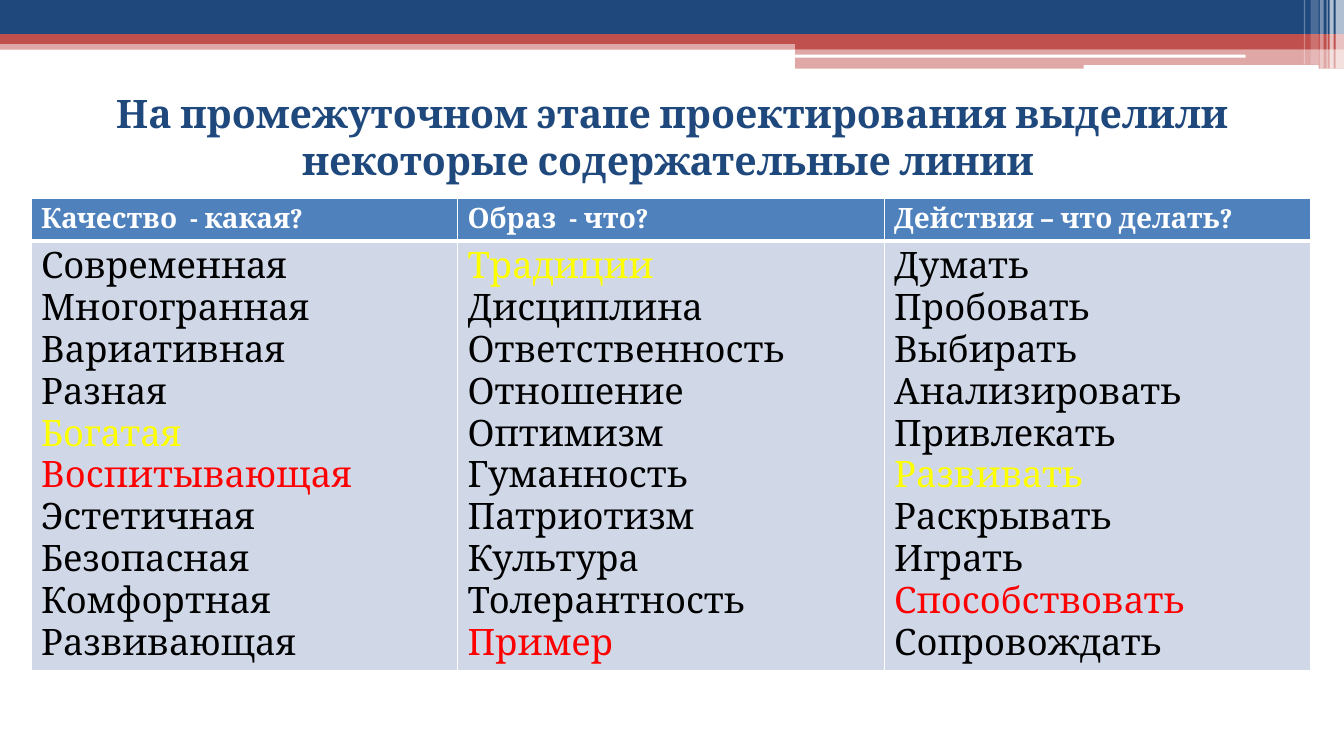
from collections import namedtuple
from dataclasses import dataclass

from lxml import etree
from pptx import Presentation
from pptx import util as u
from pptx.dml.color import RGBColor
from pptx.enum import shapes, text
from pptx.oxml.ns import qn

Box = namedtuple("Box", "left top width height")


@dataclass(frozen=True)
class Theme:
    """Colours, font and type sizes of the deck."""
    navy: str = "1F497D"
    red: str = "C0504D"
    blue: str = "4F81BD"
    pale: str = "D0D8E8"
    white: str = "FFFFFF"
    black: str = "000000"
    yellow_mark: str = "FFFF00"
    red_mark: str = "FF0000"
    font: str = "Cambria"
    title_size: int = 28
    header_size: int = 20
    body_size: int = 26


THEME = Theme()
PAGE = Box(0, 0, 33.87, 19.05)
TITLE = "На промежуточном этапе проектирования выделили некоторые содержательные линии "
COLUMNS = {
    "Качество  - какая?": [
        "Современная", "Многогранная", "Вариативная", "Разная", "Богатая",
        "Воспитывающая", "Эстетичная", "Безопасная", "Комфортная Развивающая"],
    "Образ  - что?": [
        "Традиции", "Дисциплина", "Ответственность", "Отношение", "Оптимизм",
        "Гуманность", "Патриотизм", "Культура", "Толерантность", "Пример"],
    "Действия – что делать?": [
        "Думать", "Пробовать", "Выбирать", "Анализировать", "Привлекать",
        "Развивать", "Раскрывать", "Играть", "Способствовать", "Сопровождать"],
}
MARKS = {
    **dict.fromkeys(["Богатая", "Традиции", "Развивать"], THEME.yellow_mark),
    **dict.fromkeys(["Воспитывающая", "Пример", "Способствовать"], THEME.red_mark),
}


def write(para, words, size, color=THEME.black, bold=False, align=text.PP_ALIGN.LEFT):
    """Put formatted words into a paragraph."""
    para.alignment = align
    span = para.add_run()
    span.text = words
    span.font.name = THEME.font
    span.font.size = u.Pt(size)
    span.font.bold = bold
    span.font.color.rgb = RGBColor.from_string(color)


def add_strip(page, box, color, opacity=100, rounded=False):
    """Draw one flat strip with an optional transparency."""
    kind = shapes.MSO_SHAPE.ROUNDED_RECTANGLE if rounded else shapes.MSO_SHAPE.RECTANGLE
    strip = page.shapes.add_shape(kind, *map(u.Cm, box))
    strip.shadow.inherit = False
    strip.line.fill.background()
    strip.fill.solid()
    strip.fill.fore_color.rgb = RGBColor.from_string(color)
    if opacity < 100:
        tint = strip.fill._xPr.find(".//" + qn("a:srgbClr"))
        etree.SubElement(tint, qn("a:alpha"), val=str(opacity * 1000))


def add_banner(page, box):
    """Draw the layered bands and the fading bars at the right edge."""
    right = box.left + box.width
    step = right - 13.83
    bands = [
        (box.left, 1.02, box.width, 0.23, THEME.red, 50),
        (box.left, 0, box.width, 0.86, THEME.navy, 100),
        (box.left, 0.86, box.width, 0.25, THEME.red, 100),
        (step, 0.99, 13.83, 0.25, THEME.red, 100),
        (step, 1.23, 13.83, 0.5, THEME.red, 50),
    ]
    for left, top, width, height, color, opacity in bands:
        add_strip(page, Box(left, box.top + top, width, height), color, opacity)
    add_strip(page, Box(step, box.top + 1.38, 11.35, 0.07), THEME.white, rounded=True)
    add_strip(page, Box(right - 6.56, box.top + 1.64, 5.92, 0.1), THEME.white, rounded=True)
    bars = [(0.21, 0.21, 1.73, 65), (0.36, 0.1, 1.73, 65), (0.44, 0.03, 1.73, 60),
            (0.61, 0.1, 1.73, 40), (0.84, 0.2, 1.63, 20), (1.01, 0.03, 1.63, 30)]
    for offset, width, height, opacity in bars:
        add_strip(page, Box(right - offset, box.top, width, height), THEME.white, opacity)


def add_title(page, box):
    """Place and format the title placeholder."""
    title = page.shapes.title
    title.left, title.top, title.width, title.height = map(u.Cm, box)
    frame = title.text_frame
    frame.word_wrap = True
    frame.auto_size = text.MSO_AUTO_SIZE.NONE
    frame.vertical_anchor = text.MSO_ANCHOR.MIDDLE
    write(frame.paragraphs[0], TITLE, THEME.title_size, THEME.navy, True, text.PP_ALIGN.CENTER)


def style_cell(cell, color, **borders):
    """Fill a cell and give it white borders of the given widths in points."""
    cell.fill.solid()
    cell.fill.fore_color.rgb = RGBColor.from_string(color)
    properties = cell._tc.get_or_add_tcPr()
    for index, side in enumerate("LRTB"):
        line = etree.Element(qn("a:ln" + side), w=str(u.Pt(borders.get(side, 1))))
        fill = etree.SubElement(line, qn("a:solidFill"))
        etree.SubElement(fill, qn("a:srgbClr"), val=THEME.white)
        properties.insert(index, line)


def add_word_table(page, box, header_height):
    """Build the table with one column of words per question."""
    table = page.shapes.add_table(2, len(COLUMNS), *map(u.Cm, box)).table
    table.horz_banding = False
    table.rows[0].height = u.Cm(header_height)
    table.rows[1].height = u.Cm(box.height - header_height)
    for index, (question, words) in enumerate(COLUMNS.items()):
        table.columns[index].width = u.Cm(box.width / len(COLUMNS))
        header, body = table.cell(0, index), table.cell(1, index)
        style_cell(header, THEME.blue, B=3)
        style_cell(body, THEME.pale, T=3)
        write(header.text_frame.paragraphs[0], question, THEME.header_size, THEME.white, True)
        frame = body.text_frame
        for number, word in enumerate(words):
            para = frame.add_paragraph() if number else frame.paragraphs[0]
            write(para, word, THEME.body_size, MARKS.get(word, THEME.black))


def main():
    """Build and save the deck."""
    deck = Presentation()
    deck.slide_width, deck.slide_height = u.Cm(PAGE.width), u.Cm(PAGE.height)
    page = deck.slides.add_slide(deck.slide_layouts[5])
    add_banner(page, PAGE)
    add_title(page, Box(1.7, 2.11, 30.48, 2.67))
    add_word_table(page, Box(0.78, 5, 32.25, 11.86), header_height=1.04)
    deck.save("out.pptx")


if __name__ == "__main__":
    main()
